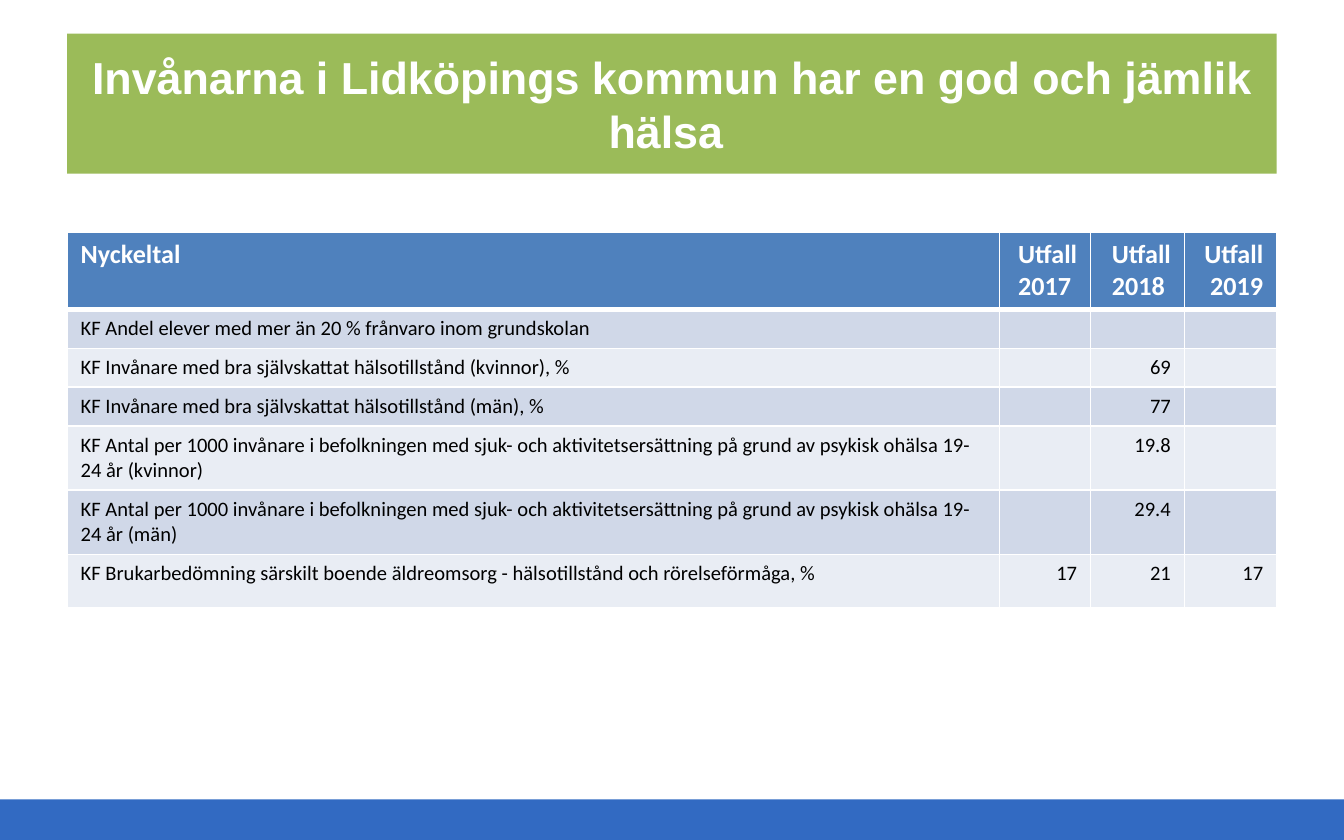
from dataclasses import dataclass

from lxml import etree
from pptx import Presentation
from pptx.dml.color import RGBColor
from pptx.enum.shapes import MSO_SHAPE
from pptx.enum.text import MSO_ANCHOR, MSO_AUTO_SIZE, PP_ALIGN
from pptx.oxml.ns import qn
from pptx.util import Emu, Pt

RECT = MSO_SHAPE.RECTANGLE
MIDDLE = MSO_ANCHOR.MIDDLE
NO_FIT = MSO_AUTO_SIZE.NONE
LEFT, CENTER, RIGHT = PP_ALIGN.LEFT, PP_ALIGN.CENTER, PP_ALIGN.RIGHT

PX = 9525  # EMU per px, 96 px to the inch
TITLE_ONLY = 5
COLORS = {
    "white": "FFFFFF",
    "black": "000000",
    "title": "9BBB59",
    "header": "4F81BD",
    "odd": "D0D8E8",
    "even": "E9EDF4",
    "footer": "326AC2",
}


@dataclass
class Row:
    height: int
    texts: tuple[str, str, str, str]


@dataclass
class Style:
    size: int
    color: str
    bold: bool
    font: str = "Calibri"


TITLE_STYLE = Style(24, "white", True, "Arial")
HEADER_STYLE = Style(14, "white", True)
BODY_STYLE = Style(11, "black", False)

COLUMNS = (666, 65, 67, 66)
LONG_TERM = ("KF Antal per 1000 invånare i befolkningen med sjuk- och "
             "aktivitetsersättning på grund av psykisk ohälsa 19-24 år")
ROWS = (
    Row(39, ("Nyckeltal", "Utfall 2017 ", "Utfall 2018 ", "Utfall 2019")),
    Row(26, ("KF Andel elever med mer än 20 % frånvaro inom grundskolan", "", "", "")),
    Row(25, ("KF Invånare med bra självskattat hälsotillstånd (kvinnor), %", "", "69", "")),
    Row(23, ("KF Invånare med bra självskattat hälsotillstånd (män), %", "", "77", "")),
    Row(39, (f"{LONG_TERM} (kvinnor)", "", "19.8", "")),
    Row(39, (f"{LONG_TERM} (män)", "", "29.4", "")),
    Row(38, ("KF Brukarbedömning särskilt boende äldreomsorg - "
             "hälsotillstånd och rörelseförmåga, %", "17", "21", "17")),
)


def px(n: int) -> Emu:
    return Emu(n * PX)


def rgb(name: str) -> RGBColor:
    return RGBColor.from_string(COLORS[name])


def fill(target, color: str) -> None:
    target.fill.solid()
    target.fill.fore_color.rgb = rgb(color)


def write(tf, text: str, style: Style, align) -> None:
    p = tf.paragraphs[0]
    p.alignment = align
    font = p.font
    font.name, font.size, font.bold = style.font, Pt(style.size), style.bold
    font.color.rgb = rgb(style.color)
    if text:
        p.add_run().text = text
    else:
        # An empty cell takes its line height from the end mark
        etree.SubElement(p._p, qn("a:endParaRPr"), sz=str(style.size * 100))


def add_borders(cell, bottom: int, top: int) -> None:
    tcPr = cell._tc.get_or_add_tcPr()
    widths = {"lnL": 1, "lnR": 1, "lnT": top, "lnB": bottom}
    for i, (tag, width) in enumerate(widths.items()):
        ln = etree.Element(qn(f"a:{tag}"), w=str(Pt(width)))
        solid = etree.SubElement(ln, qn("a:solidFill"))
        etree.SubElement(solid, qn("a:srgbClr"), val=COLORS["white"])
        tcPr.insert(i, ln)


def add_title(s, text: str) -> None:
    sp = s.shapes.title
    sp.left, sp.top, sp.width, sp.height = px(48), px(24), px(864), px(100)
    fill(sp, "title")
    tf = sp.text_frame
    tf.word_wrap, tf.auto_size, tf.vertical_anchor = True, NO_FIT, MIDDLE
    write(tf, text, TITLE_STYLE, CENTER)


def add_indicators(s) -> None:
    height = sum(row.height for row in ROWS)
    table = s.shapes.add_table(len(ROWS), len(COLUMNS), px(48), px(166),
                               px(sum(COLUMNS)), px(height)).table
    for column, width in zip(table.columns, COLUMNS):
        column.width = px(width)
    for i, row in enumerate(ROWS):
        table.rows[i].height = px(row.height)
        style = BODY_STYLE if i else HEADER_STYLE
        color = ("odd" if i % 2 else "even") if i else "header"
        for j, text in enumerate(row.texts):
            cell = table.cell(i, j)
            fill(cell, color)
            add_borders(cell, bottom=1 if i else 3, top=3 if i == 1 else 1)
            write(cell.text_frame, text, style, RIGHT if j else LEFT)


def add_footer(s) -> None:
    sp = s.shapes.add_shape(RECT, px(0), px(571), px(960), px(29))
    sp.shadow.inherit = False
    fill(sp, "footer")
    sp.line.fill.background()


def main() -> None:
    prs = Presentation()
    prs.slide_width, prs.slide_height = px(960), px(600)
    s = prs.slides.add_slide(prs.slide_layouts[TITLE_ONLY])
    add_footer(s)
    add_title(s, "Invånarna i Lidköpings kommun har en god och jämlik hälsa ")
    add_indicators(s)
    prs.save("out.pptx")


if __name__ == "__main__":
    main()
